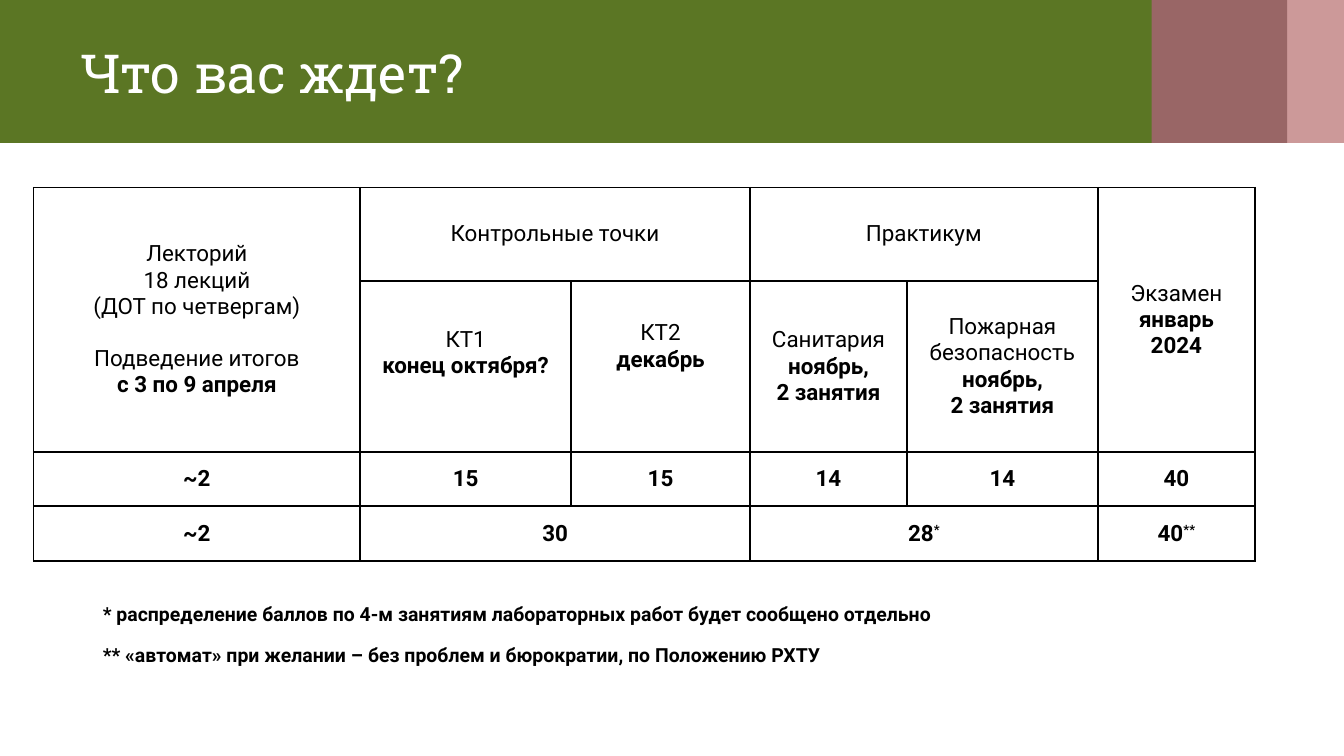
from pptx import Presentation
from pptx.dml.color import RGBColor
from pptx.enum.shapes import MSO_SHAPE as Preset
from pptx.enum.text import MSO_ANCHOR as Anchor, PP_ALIGN as Align
from pptx.oxml import parse_xml
from pptx.oxml.ns import nsdecls
from pptx.util import Pt

GREEN = RGBColor(0x5B, 0x76, 0x24)
PLUM = RGBColor(0x99, 0x66, 0x66)
PINK = RGBColor(0xCC, 0x99, 0x99)
WHITE = RGBColor(0xFF, 0xFF, 0xFF)
BLACK = RGBColor(0x00, 0x00, 0x00)

BANDS = [(679, 41, PINK), (614, 75.5, PLUM), (0, 617, GREEN)]
COLUMNS = [175, 113, 95.8, 84.2, 102.2, 84.2]
ROWS = [50, 91.5, 29.25, 29.25]


def plain(text):
    return [(text, False, False)]


def bold(text, mark=""):
    return [(text, True, False)] + ([(mark, True, True)] if mark else [])


HEADINGS = [
    (0, 0, 1, 0, [plain("Лекторий"), plain("18 лекций"), plain("(ДОТ по четвергам)"),
                  plain("Подведение итогов"), bold("с 3 по 9 апреля")]),
    (0, 1, 0, 2, [plain("Контрольные точки")]),
    (0, 3, 0, 4, [plain("Практикум")]),
    (0, 5, 1, 5, [plain("Экзамен"), bold("январь 2024")]),
    (1, 1, 1, 1, [plain("КТ1"), bold("конец октября?")]),
    (1, 2, 1, 2, [plain("КТ2"), bold("декабрь")]),
    (1, 3, 1, 3, [plain("Санитария"), bold("ноябрь,"), bold("2 занятия")]),
    (1, 4, 1, 4, [plain("Пожарная безопасность"), bold("ноябрь,"), bold("2 занятия")]),
]
POINTS = [(2, column, 2, column, [bold(text)])
          for column, text in enumerate(["~2", "15", "15", "14", "14", "40"])]
TOTALS = [
    (3, 0, 3, 0, [bold("~2")]),
    (3, 1, 3, 2, [bold("30")]),
    (3, 3, 3, 4, [bold("28", "*")]),
    (3, 5, 3, 5, [bold("40", "**")]),
]
NOTES = [
    "* распределение баллов по 4-м занятиям лабораторных работ будет сообщено отдельно",
    "** «автомат» при желании – без проблем и бюрократии, по Положению РХТУ",
]


class SlideBuilder:
    """Holds the text style and the page, and draws each kind of element."""

    def __init__(self, page, font="Roboto", size=12, color=BLACK):
        self.page = page
        self.font, self.size, self.color = font, size, color

    def add_span(self, para, text, heavy=False, raised=False, font=None, size=None, color=None):
        span = para.add_run()
        span.text = text
        span.font.name = font or self.font
        span.font.size = Pt(size or self.size)
        span.font.bold = heavy
        span.font.color.rgb = color or self.color
        if raised:
            span._r.get_or_add_rPr().set("baseline", "30000")

    def fill_paragraphs(self, frame, paragraphs, align, **style):
        for index, spans in enumerate(paragraphs):
            para = frame.add_paragraph() if index else frame.paragraphs[0]
            para.alignment = align
            for text, heavy, raised in spans:
                self.add_span(para, text, heavy, raised, **style)

    def band(self, left, width, height, color):
        box = self.page.shapes.add_shape(Preset.RECTANGLE, Pt(left), 0, Pt(width), Pt(height))
        box.shadow.inherit = False
        box.fill.solid()
        box.fill.fore_color.rgb = color
        box.line.fill.background()

    def title(self, text, left, top, width, height):
        box = self.page.shapes.title
        box.left, box.top, box.width, box.height = Pt(left), Pt(top), Pt(width), Pt(height)
        box.text_frame.vertical_anchor = Anchor.MIDDLE
        para = box.text_frame.paragraphs[0]
        para.alignment = Align.LEFT
        self.add_span(para, text, font="Roboto Slab", size=28.8, color=WHITE)
        self.page.shapes._spTree.append(box._element)

    def border(self, cell):
        properties = cell._tc.get_or_add_tcPr()
        for side in ("lnL", "lnR", "lnT", "lnB"):
            properties.append(parse_xml(
                f'<a:{side} {nsdecls("a")} w="{Pt(1)}"><a:solidFill>'
                f'<a:srgbClr val="{BLACK}"/></a:solidFill></a:{side}>'))
        cell.fill.background()

    def table(self, left, top, columns, rows, entries):
        table = self.page.shapes.add_table(
            len(rows), len(columns), Pt(left), Pt(top), Pt(sum(columns)), Pt(sum(rows))).table
        table.first_row = table.horz_banding = False
        for column, width in zip(table.columns, columns):
            column.width = Pt(width)
        for row, height in zip(table.rows, rows):
            row.height = Pt(height)
        for cell in table.iter_cells():
            self.border(cell)
        for first_row, first_column, last_row, last_column, paragraphs in entries:
            cell = table.cell(first_row, first_column)
            if (first_row, first_column) != (last_row, last_column):
                cell.merge(table.cell(last_row, last_column))
            cell.vertical_anchor = Anchor.MIDDLE
            self.fill_paragraphs(cell.text_frame, paragraphs, Align.CENTER)
        return table

    def notes(self, lines, left, top, width, height):
        box = self.page.shapes.add_textbox(Pt(left), Pt(top), Pt(width), Pt(height))
        box.text_frame.word_wrap = True
        paragraphs = [[(line, True, True)] for line in lines]
        self.fill_paragraphs(box.text_frame, paragraphs, Align.LEFT, size=18)


def main():
    deck = Presentation()
    deck.slide_width, deck.slide_height = Pt(720), Pt(405)
    builder = SlideBuilder(deck.slides.add_slide(deck.slide_layouts[5]))
    for left, width, color in BANDS:
        builder.band(left, width, 76.5, color)
    builder.title("Что вас ждет?", 36, 14, 648, 49)
    table = builder.table(18, 100.5, COLUMNS, ROWS, HEADINGS + POINTS + TOTALS)
    table.cell(0, 0).text_frame.paragraphs[3].space_before = Pt(14)
    table.cell(1, 1).margin_bottom = Pt(18)
    table.cell(1, 2).margin_bottom = Pt(25)
    builder.notes(NOTES, 48, 317, 540, 50)
    deck.save("out.pptx")


if __name__ == "__main__":
    main()
